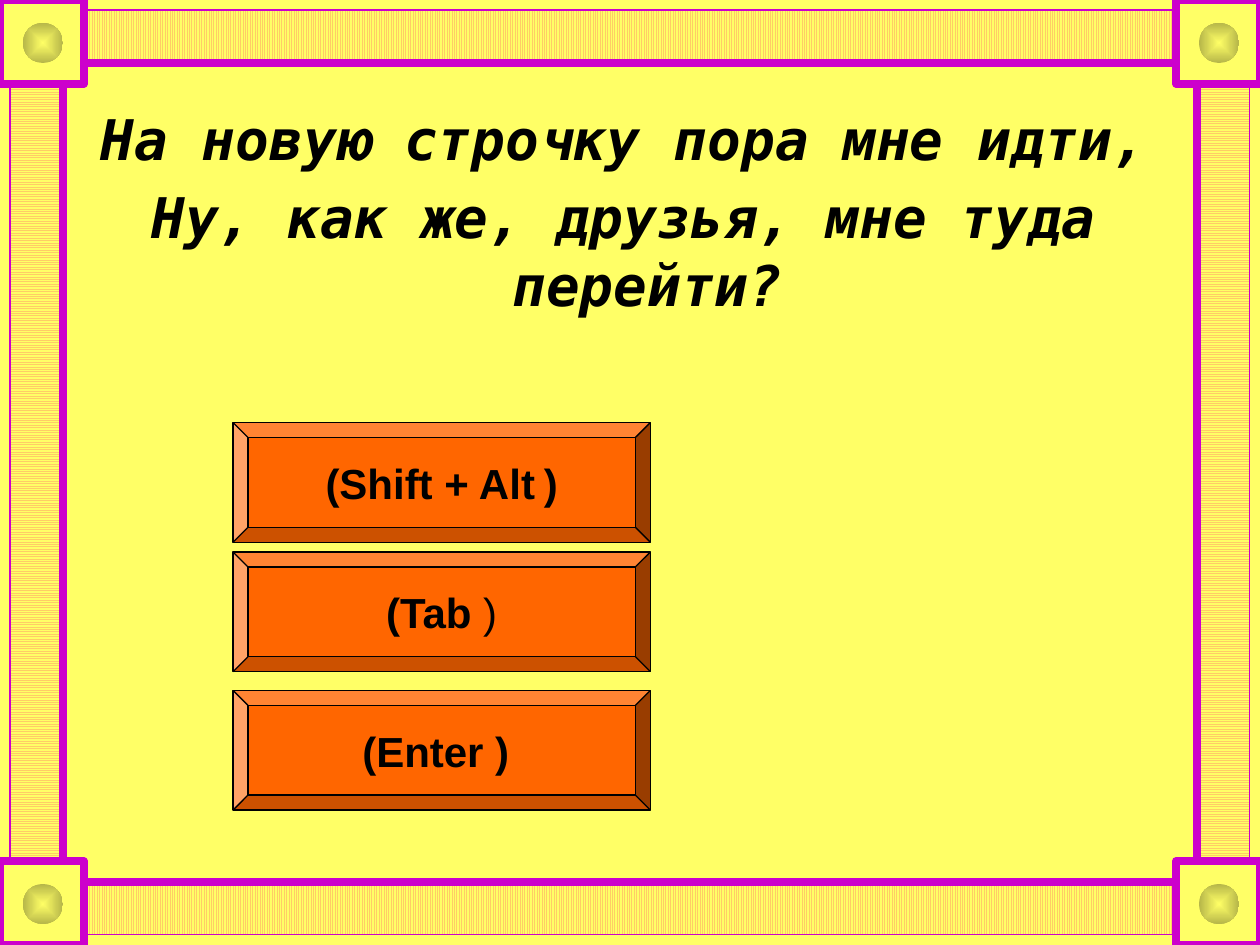
"""Build a keyboard quiz slide with a framed border, a riddle and three answer buttons."""
from itertools import product

from lxml import etree
from pptx import Presentation
from pptx.dml.color import RGBColor
from pptx.enum.dml import MSO_PATTERN as Pattern
from pptx.enum.shapes import MSO_SHAPE as Shape
from pptx.enum.text import MSO_ANCHOR as Anchor, PP_ALIGN as Align
from pptx.oxml import parse_xml
from pptx.oxml.ns import nsdecls, qn
from pptx.util import Cm, Pt

RIDDLE = ["На новую строчку пора мне идти,", "Ну, как же, друзья, мне туда перейти?"]
ANSWERS = [
    (8.52, [("(Shift + Alt", 24, True), (" ", 18, False), (")", 24, True)]),
    (11.13, [("(Tab", 24, True), (" )", 24, False)]),
    (13.92, [("(Enter ) ", 24, True)]),
]
COLORS = {
    "paper": "FFFF66", "stripe": "FFCC66", "frame": "CC00CC",
    "dot": "B6B649", "button": "FF6600", "ink": "000000",
}
WIDTH, HEIGHT = 25.4, 19.05
INNER, OUTER = 1.27, 0.21
BAND = INNER - OUTER
CORNER, DOT_OFFSET, DOT = 1.69, 0.46, 0.81
BUTTON_LEFT, BUTTON_WIDTH, BUTTON_HEIGHT = 4.7, 8.41, 2.41


def color(name):
    return RGBColor.from_string(COLORS[name])


def add_shape(slide, kind, box, fill=None, line=None, line_width=0):
    shape = slide.shapes.add_shape(kind, *map(Cm, box))
    shape.shadow.inherit = False
    if fill:
        shape.fill.solid()
        shape.fill.fore_color.rgb = color(fill)
    else:
        shape.fill.background()
    if line:
        shape.line.color.rgb = color(line)
        shape.line.width = Pt(line_width)
    else:
        shape.line.fill.background()
    return shape


def add_band(slide, box, pattern):
    fill = add_shape(slide, Shape.RECTANGLE, box).fill
    fill.patterned()
    fill.pattern = pattern
    fill.fore_color.rgb = color("stripe")
    fill.back_color.rgb = color("paper")


def add_dot(slide, box):
    shape = add_shape(slide, Shape.OVAL, box)
    shape.fill.gradient()
    for stop, name in zip(shape.fill.gradient_stops, ("paper", "dot")):
        stop.color.rgb = color(name)
    gradient = shape.element.spPr.find(qn("a:gradFill"))
    gradient.remove(gradient.find(qn("a:lin")))
    gradient.append(parse_xml(f'<a:path {nsdecls("a")} path="shape"/>'))
    center = etree.SubElement(gradient[-1], qn("a:fillToRect"))
    for side in "ltrb":
        center.set(side, "50000")


def add_frame(slide):
    inner_width, inner_height = WIDTH - 2 * INNER, HEIGHT - 2 * INNER
    for top in (OUTER, HEIGHT - INNER):
        add_band(slide, (INNER, top, inner_width, BAND), Pattern.NARROW_VERTICAL)
    for left in (OUTER, WIDTH - INNER):
        add_band(slide, (left, INNER, BAND, inner_height), Pattern.NARROW_HORIZONTAL)
    for inset, line_width in ((INNER, 4.5), (OUTER, 1)):
        box = (inset, inset, WIDTH - 2 * inset, HEIGHT - 2 * inset)
        add_shape(slide, Shape.RECTANGLE, box, None, "frame", line_width)
    for left, top in product((0, WIDTH - CORNER), (0, HEIGHT - CORNER)):
        add_shape(slide, Shape.RECTANGLE, (left, top, CORNER, CORNER), "paper", "frame", 4.5)
        add_dot(slide, (left + DOT_OFFSET, top + DOT_OFFSET, DOT, DOT))


def add_riddle(slide):
    frame = slide.shapes.add_textbox(Cm(0.58), Cm(1.98), Cm(24), Cm(16)).text_frame
    frame.word_wrap = True
    frame.text = "\n".join(RIDDLE)
    for paragraph in frame.paragraphs:
        paragraph.alignment = Align.CENTER
        paragraph.space_before = Pt(6.4)
        properties = paragraph._p.get_or_add_pPr()
        properties.set("marL", str(Cm(0.95)))
        properties.set("indent", str(-Cm(0.95)))
        font = paragraph.font
        font.name, font.size = "DejaVu Sans Mono", Pt(32)
        font.bold = font.italic = True
        font.color.rgb = color("ink")


def add_button(slide, top, runs):
    box = (BUTTON_LEFT, top, BUTTON_WIDTH, BUTTON_HEIGHT)
    shape = add_shape(slide, Shape.BEVEL, box, "button", "ink", 0.75)
    frame = shape.text_frame
    frame.word_wrap = False
    frame.vertical_anchor = Anchor.MIDDLE
    paragraph = frame.paragraphs[0]
    paragraph.alignment = Align.CENTER
    paragraph.font.name = "Arial"
    paragraph.font.color.rgb = color("ink")
    for text, size, bold in runs:
        run = paragraph.add_run()
        run.text = text
        run.font.size, run.font.bold = Pt(size), bold


def main():
    presentation = Presentation()
    presentation.slide_width, presentation.slide_height = Cm(WIDTH), Cm(HEIGHT)
    slide = presentation.slides.add_slide(presentation.slide_layouts[6])
    slide.background.fill.solid()
    slide.background.fill.fore_color.rgb = color("paper")
    add_frame(slide)
    add_riddle(slide)
    for top, runs in ANSWERS:
        add_button(slide, top, runs)
    presentation.save("out.pptx")


if __name__ == "__main__":
    main()
